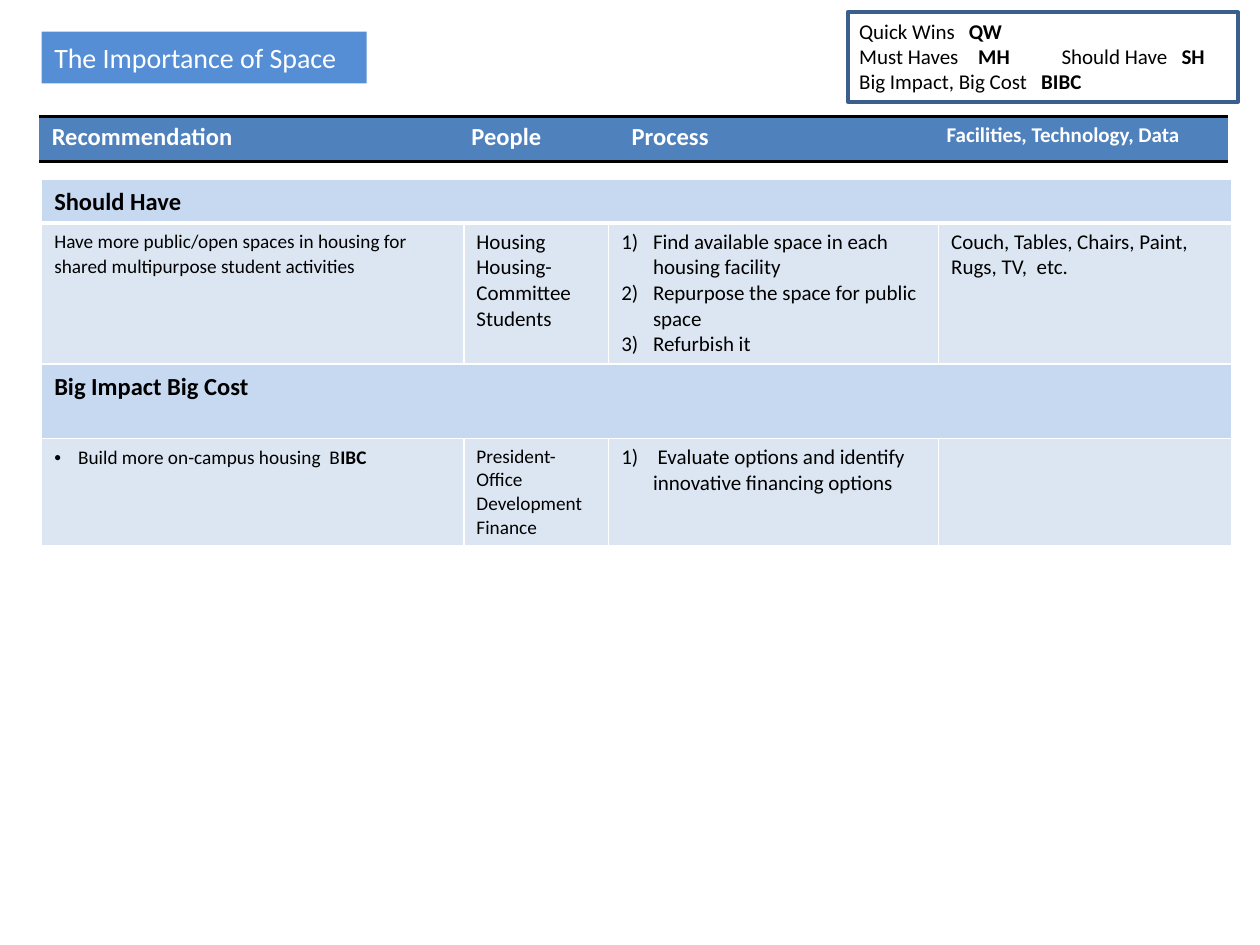
import lxml.etree
import pptx
import pptx.dml.color
import pptx.enum.shapes
import pptx.enum.text
import pptx.oxml.ns
import pptx.util
from pptx.util import Cm

FONT = "Calibri"
BLACK, WHITE = "000000", "FFFFFF"
HEADER_BLUE, SECTION_BLUE, ROW_BLUE = "4F81BD", "C6D9F1", "DCE6F2"
TITLE_BLUE, LEGEND_LINE = "558ED5", "3A5F8C"
TABLE_GRID = dict.fromkeys("LRTB", (WHITE, 1))
HEADER_RULES = {"L": None, "R": None, "T": (BLACK, 2), "B": (BLACK, 2)}


def color(value):
    return pptx.dml.color.RGBColor.from_string(value)


def add_element(parent, tag, **attributes):
    element = lxml.etree.SubElement(parent, pptx.oxml.ns.qn(tag))
    for name, value in attributes.items():
        element.set(name, str(value))
    return element


def set_bullet(paragraph, bullet, indent):
    properties = paragraph._p.get_or_add_pPr()
    properties.set("marL", str(indent))
    properties.set("indent", str(-indent))
    if bullet == "number":
        add_element(properties, "a:buAutoNum", type="arabicParenR")
    else:
        add_element(properties, "a:buFont", typeface="Arial")
        add_element(properties, "a:buChar", char=bullet)


def set_tabs(paragraph, stops):
    tab_list = add_element(paragraph._p.get_or_add_pPr(), "a:tabLst")
    for stop in stops:
        add_element(tab_list, "a:tab", pos=Cm(stop), algn="l")


def write_text(frame, text, size=12, fill=BLACK, bold=False, spacing=None,
               bullet=None, indent=Cm(0.64), tabs=()):
    """Write one paragraph per line; parts between asterisks are bold."""
    frame.word_wrap = True
    for number, line in enumerate(text.split("\n")):
        paragraph = frame.paragraphs[0] if number == 0 else frame.add_paragraph()
        paragraph.alignment = pptx.enum.text.PP_ALIGN.LEFT
        if spacing:
            paragraph.line_spacing = spacing
        if bullet:
            set_bullet(paragraph, bullet, indent)
        if tabs:
            set_tabs(paragraph, tabs[number])
        for part, words in enumerate(line.split("*")):
            if words:
                run = paragraph.add_run()
                run.text = words
                run.font.name = FONT
                run.font.size = pptx.util.Pt(size)
                run.font.bold = bold or part % 2 == 1
                run.font.color.rgb = color(fill)


def style_cell(cell, fill, borders):
    properties = cell._tc.get_or_add_tcPr()
    for side, border in borders.items():
        line = add_element(properties, f"a:ln{side}")
        if border:
            line.set("w", str(pptx.util.Pt(border[1])))
            solid = add_element(line, "a:solidFill")
            add_element(solid, "a:srgbClr", val=border[0])
        else:
            add_element(line, "a:noFill")
    cell.fill.solid()
    cell.fill.fore_color.rgb = color(fill)


def add_table(slide, left, top, widths, heights):
    table = slide.shapes.add_table(
        len(heights), len(widths), Cm(left), Cm(top),
        Cm(sum(widths)), Cm(sum(heights))).table
    table.first_row = table.horz_banding = False
    for column, width in zip(table.columns, widths):
        column.width = Cm(width)
    for row, height in zip(table.rows, heights):
        row.height = Cm(height)
    return table


def add_title(slide, text):
    title = slide.shapes.title
    title.left, title.top = Cm(0.84), Cm(0.64)
    title.width, title.height = Cm(6.55), Cm(1.04)
    geometry = add_element(title._element.spPr, "a:prstGeom", prst="roundRect")
    add_element(geometry, "a:avLst")
    title.fill.solid()
    title.fill.fore_color.rgb = color(TITLE_BLUE)
    title.text_frame.auto_size = pptx.enum.text.MSO_AUTO_SIZE.NONE
    title.text_frame.vertical_anchor = pptx.enum.text.MSO_ANCHOR.MIDDLE
    write_text(title.text_frame, text, size=16, fill=WHITE)


def add_legend(slide):
    group = slide.shapes.add_group_shape()
    label = group.shapes.add_textbox(Cm(17.07), Cm(0.25), Cm(7.62), Cm(1.8))
    write_text(label.text_frame,
               "Quick Wins\t*QW*\n"
               "Must Haves\t*MH*\tShould Have\t*SH*\n"
               "Big Impact, Big Cost\t*BIBC*",
               tabs=((2.21,), (2.4, 4.08, 6.5), (3.67,)))
    frame = group.shapes.add_shape(
        pptx.enum.shapes.MSO_SHAPE.RECTANGLE,
        Cm(17.09), Cm(0.25), Cm(7.87), Cm(1.8))
    frame.shadow.inherit = False
    frame.fill.background()
    frame.line.color.rgb = color(LEGEND_LINE)
    frame.line.width = pptx.util.Pt(2.25)


def add_section_row(table, row, text):
    for cell in table.rows[row].cells:
        style_cell(cell, SECTION_BLUE, TABLE_GRID)
    table.cell(row, 0).merge(table.cell(row, 3))
    write_text(table.cell(row, 0).text_frame, text, size=14, bold=True, spacing=1.05)


def add_detail_row(table, row, contents):
    for cell, (text, text_format) in zip(table.rows[row].cells, contents):
        style_cell(cell, ROW_BLUE, TABLE_GRID)
        write_text(cell.text_frame, text, **text_format)


def add_recommendations(slide):
    table = add_table(slide, 0.84, 3.61, (8.51, 2.92, 6.65, 5.92),
                      (0.88, 2.84, 1.5, 2.16))
    add_section_row(table, 0, "Should Have")
    add_detail_row(table, 1, (
        ("Have more public/open spaces in housing for shared multipurpose "
         "student activities", {"size": 11, "spacing": 1.05}),
        ("Housing\nHousing-Committee\nStudents", {}),
        ("Find available space in each housing facility\n"
         "Repurpose the space for public space\nRefurbish it", {"bullet": "number"}),
        ("Couch, Tables, Chairs, Paint, Rugs, TV,  etc.", {})))
    add_section_row(table, 2, "Big Impact Big Cost")
    # Only the first section's lower rule is heavy
    for tag, row in (("a:lnB", 0), ("a:lnT", 1)):
        for cell in table.rows[row].cells:
            rule = cell._tc.tcPr.find(pptx.oxml.ns.qn(tag))
            rule.set("w", str(pptx.util.Pt(3)))
    add_detail_row(table, 3, (
        ("Build more on-campus housing  B*IBC*",
         {"size": 11, "spacing": 1.05, "bullet": "•", "indent": Cm(0.48)}),
        ("President- Office\nDevelopment\nFinance", {"size": 11}),
        (" Evaluate options and identify innovative financing options",
         {"bullet": "number"}),
        ("", {})))


def add_column_headings(slide):
    table = add_table(slide, 0.79, 2.34, (8.46, 3.23, 6.35, 5.92), (0.91,))
    headings = (("Recommendation", 14), ("People", 14), ("Process", 14),
                ("Facilities, Technology, Data", 12))
    for cell, (text, size) in zip(table.rows[0].cells, headings):
        style_cell(cell, HEADER_BLUE, HEADER_RULES)
        write_text(cell.text_frame, text, size=size, fill=WHITE, bold=True)


def main():
    presentation = pptx.Presentation()
    presentation.slide_width, presentation.slide_height = Cm(25.4), Cm(19.05)
    slide = presentation.slides.add_slide(presentation.slide_layouts[5])
    add_recommendations(slide)
    add_column_headings(slide)
    add_title(slide, "The Importance of Space")
    add_legend(slide)
    presentation.save("out.pptx")


if __name__ == "__main__":
    main()
